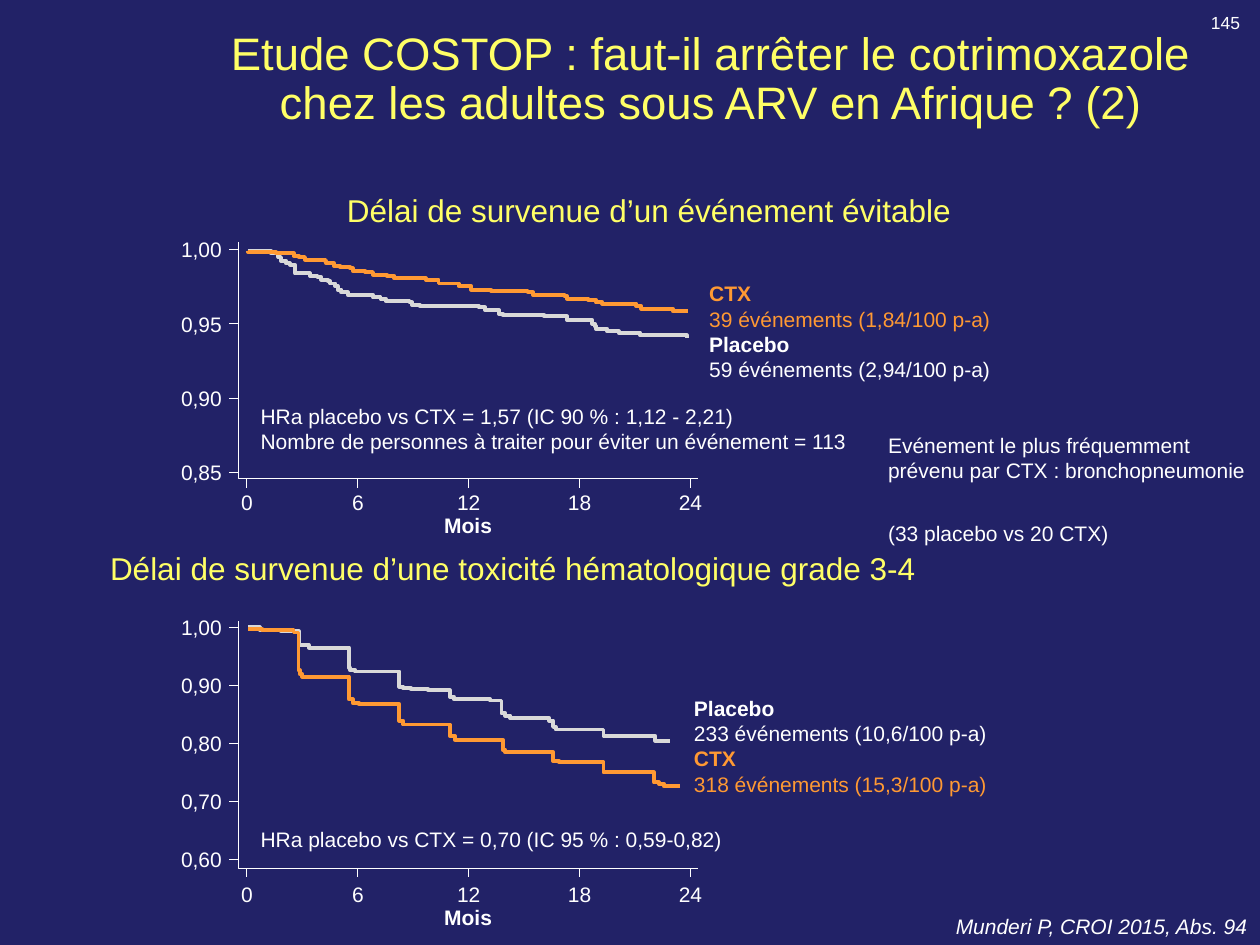
from dataclasses import dataclass

from lxml import etree
from pptx import Presentation
from pptx import util as u
from pptx.dml.color import RGBColor
from pptx.enum import shapes, text
from pptx.oxml import ns


@dataclass(frozen=True)
class Theme:
    font: str = "Arial"
    background: str = "222267"
    heading: str = "FFFF66"
    white: str = "FFFFFF"
    placebo: str = "D9D9D9"
    ctx: str = "FF9933"
    title_size: int = 26
    subtitle_size: int = 18
    body_size: int = 12
    number_size: int = 10
    axis_width: float = 0.5
    curve_width: float = 2.25


THEME = Theme()
LEFT, CENTER, RIGHT = text.PP_ALIGN.LEFT, text.PP_ALIGN.CENTER, text.PP_ALIGN.RIGHT

# Horizontal scale shared by both plots
AXIS_LEFT, AXIS_RIGHT = 1.89, 5.54
FIRST_MONTH, MONTH_STEP = 1.96, 0.88
MONTHS = ["0", "6", "12", "18", "24"]
TICK = 0.07
CURVE_LEFT = 1.97

# Each step runs across to x, then drops to y
EVENT_PLACEBO = [
    (2.15, 2.01), (2.21, 2.04), (2.23, 2.07), (2.27, 2.09), (2.3, 2.1), (2.34, 2.17),
    (2.46, 2.19), (2.52, 2.2), (2.55, 2.22), (2.6, 2.23), (2.62, 2.25), (2.66, 2.27),
    (2.68, 2.3), (2.71, 2.32), (2.76, 2.34), (2.96, 2.36), (3.02, 2.37), (3.06, 2.39),
    (3.25, 2.4), (3.27, 2.42), (3.33, 2.43), (3.8, 2.44), (3.85, 2.46), (3.96, 2.49),
    (3.99, 2.5), (4.32, 2.51), (4.5, 2.54), (4.7, 2.57), (4.72, 2.59), (4.73, 2.61),
    (4.82, 2.63), (4.91, 2.64), (5.08, 2.66), (5.45, 2.68)]
EVENT_CTX = [
    (1.97, 2), (2.19, 2.01), (2.33, 2.03), (2.37, 2.04), (2.42, 2.06), (2.58, 2.07),
    (2.59, 2.09), (2.65, 2.11), (2.7, 2.12), (2.78, 2.13), (2.8, 2.15), (2.9, 2.16),
    (2.96, 2.18), (3.07, 2.19), (3.13, 2.21), (3.38, 2.22), (3.48, 2.25), (3.64, 2.27),
    (3.74, 2.3), (3.9, 2.31), (4.19, 2.32), (4.23, 2.34), (4.48, 2.35), (4.5, 2.37),
    (4.67, 2.38), (4.73, 2.4), (4.78, 2.41), (5.05, 2.43), (5.09, 2.45), (5.34, 2.47),
    (5.46, 2.47)]
TOXICITY_PLACEBO = [
    (2.06, 5), (2.23, 5.01), (2.37, 5.12), (2.45, 5.14), (2.77, 5.3), (2.78, 5.32),
    (2.82, 5.33), (3.17, 5.45), (3.2, 5.46), (3.26, 5.47), (3.4, 5.48), (3.57, 5.53),
    (3.6, 5.55), (3.89, 5.56), (3.98, 5.66), (4.01, 5.68), (4.05, 5.7), (4.36, 5.72),
    (4.39, 5.77), (4.41, 5.79), (4.79, 5.84), (5.2, 5.88), (5.32, 5.88)]
TOXICITY_CTX = [
    (2.08, 5), (2.33, 5.02), (2.37, 5.32), (2.38, 5.35), (2.4, 5.37), (2.77, 5.55),
    (2.8, 5.58), (2.85, 5.59), (3.17, 5.72), (3.2, 5.75), (3.57, 5.84), (3.61, 5.87),
    (3.99, 5.95), (4.01, 5.97), (4.39, 6.04), (4.44, 6.05), (4.79, 6.13), (5.19, 6.21),
    (5.23, 6.22), (5.27, 6.24), (5.4, 6.24)]


def color(value):
    return RGBColor.from_string(value)


def add_text(parent, box, lines, size=THEME.body_size, fill=THEME.white,
             align=LEFT, wrap=False, bold=False, italic=False):
    """Add a text box with one paragraph for each line."""
    shape = parent.add_textbox(*(u.Inches(value) for value in box))
    frame = shape.text_frame
    frame.text = "\n".join(lines)
    frame.word_wrap = wrap
    for paragraph in frame.paragraphs:
        paragraph.alignment = align
        for run in paragraph.runs:
            font = run.font
            font.name, font.size = THEME.font, u.Pt(size)
            font.bold, font.italic = bold, italic
            font.color.rgb = color(fill)
    return shape


def add_text_shadow(run):
    properties = run.font._element
    effects = etree.Element(ns.qn("a:effectLst"))
    shadow = etree.SubElement(effects, ns.qn("a:outerShdw"), dist="38100", dir="2700000")
    etree.SubElement(shadow, ns.qn("a:srgbClr"), val="000000")
    properties.find(ns.qn("a:solidFill")).addnext(effects)


def add_title(parent, content):
    shape = add_text(parent, (1.53, 0.13, 8.23, 1.02), [content], THEME.title_size,
                     THEME.heading, CENTER, wrap=True)
    shape.text_frame.vertical_anchor = text.MSO_ANCHOR.MIDDLE
    paragraph = shape.text_frame.paragraphs[0]
    paragraph.line_spacing = 0.9
    add_text_shadow(paragraph.runs[0])


def add_legend(parent, box, entries):
    """Add bold arm names, each followed by its event count."""
    lines = [line for name, count, _ in entries for line in (name, count)]
    paragraphs = add_text(parent, box, lines).text_frame.paragraphs
    for index, paragraph in enumerate(paragraphs):
        font = paragraph.runs[0].font
        font.bold = index % 2 == 0
        font.color.rgb = color(entries[index // 2][2])


def add_tick(parent, x1, y1, x2, y2):
    ends = (u.Inches(value) for value in (x1, y1, x2, y2))
    connector = parent.add_connector(shapes.MSO_CONNECTOR.STRAIGHT, *ends)
    connector.line.color.rgb = color(THEME.white)
    connector.line.width = u.Pt(THEME.axis_width)
    etree.SubElement(connector._element.spPr, ns.qn("a:effectLst"))


def add_outline(parent, points, stroke, width):
    start, *others = [(u.Inches(x), u.Inches(y)) for x, y in points]
    builder = parent.build_freeform(*start)
    builder.add_line_segments(others, close=False)
    shape = builder.convert_to_shape()
    shape.shadow.inherit = False
    shape.fill.background()
    shape.line.color.rgb = color(stroke)
    shape.line.width = u.Pt(width)


def add_curve(parent, top, steps, stroke):
    points = [(CURVE_LEFT, top)]
    for x, y in steps:
        points += [(x, points[-1][1]), (x, y)]
    add_outline(parent, points, stroke, THEME.curve_width)


def add_plot(slide, top, bottom, first_tick, tick_step, levels, month_top, curves):
    """Add axes, ticks, labels and curves, and return the group's shapes."""
    parent = slide.shapes.add_group_shape().shapes
    add_outline(parent, [(AXIS_LEFT, top), (AXIS_LEFT, bottom), (AXIS_RIGHT, bottom)],
                THEME.white, THEME.axis_width)
    for index, month in enumerate(MONTHS):
        x = FIRST_MONTH + index * MONTH_STEP
        width = 0.29 if len(month) == 1 else 0.39
        add_tick(parent, x, bottom + TICK, x, bottom)
        add_text(parent, (x - width / 2, month_top, width, 0.3), [month], align=CENTER)
    for index, level in enumerate(levels):
        y = first_tick + index * tick_step
        add_tick(parent, AXIS_LEFT - TICK, y, AXIS_LEFT, y)
        add_text(parent, (1.33, y - 0.15, 0.53, 0.3), [level], align=RIGHT)
    for curve_top, steps, stroke in curves:
        add_curve(parent, curve_top, steps, stroke)
    add_text(parent, (3.42, month_top + 0.18, 0.59, 0.3), ["Mois"], align=CENTER, bold=True)
    return parent


def main():
    presentation = Presentation()
    presentation.slide_width, presentation.slide_height = u.Inches(10), u.Inches(7.5)
    slide = presentation.slides.add_slide(presentation.slide_layouts[6])
    slide.background.fill.solid()
    slide.background.fill.fore_color.rgb = color(THEME.background)

    # Headings
    add_title(slide.shapes, "Etude COSTOP : faut-il arrêter le cotrimoxazole "
                            "chez les adultes sous ARV en Afrique ? (2)")
    for box, heading in [
            ((0.5, 1.47, 9.3, 0.45), "Délai de survenue d’un événement évitable"),
            ((0.5, 4.31, 7.14, 0.45), "Délai de survenue d’une toxicité hématologique grade 3-4")]:
        add_text(slide.shapes, box, [heading], THEME.subtitle_size, THEME.heading,
                 CENTER, wrap=True)

    # Preventable events
    events = add_plot(slide, 1.92, 3.8, 1.98, 0.59, ["1,00", "0,95", "0,90", "0,85"], 3.84,
                      [(1.99, EVENT_PLACEBO, THEME.placebo), (1.99, EVENT_CTX, THEME.ctx)])
    add_text(events, (1.97, 3.15, 4.89, 0.51),
             ["HRa placebo vs CTX = 1,57 (IC 90 % : 1,12 - 2,21)",
              "Nombre de personnes à traiter pour éviter un événement = 113"])
    add_legend(events, (5.53, 2.18, 2.45, 0.91),
               [("CTX", "39 événements (1,84/100 p-a)", THEME.ctx),
                ("Placebo", "59 événements (2,94/100 p-a)", THEME.white)])

    # Haematological toxicity
    toxicity = add_plot(slide, 4.93, 6.89, 4.98, 0.46,
                        ["1,00", "0,90", "0,80", "0,70", "0,60"], 6.95,
                        [(4.98, TOXICITY_PLACEBO, THEME.placebo),
                         (4.99, TOXICITY_CTX, THEME.ctx)])
    add_text(toxicity, (1.97, 6.51, 3.9, 0.3),
             ["HRa placebo vs CTX = 0,70 (IC 95 % : 0,59-0,82)"])
    add_legend(toxicity, (5.41, 5.47, 2.54, 0.91),
               [("Placebo", "233 événements (10,6/100 p-a)", THEME.white),
                ("CTX", "318 événements (15,3/100 p-a)", THEME.ctx)])

    # Comment, citation and slide number
    add_text(slide.shapes, (6.95, 3.38, 3.05, 0.71),
             ["Evénement le plus fréquemment prévenu par CTX : bronchopneumonie "
              "\v(33 placebo vs 20 CTX)"], wrap=True)
    add_text(slide.shapes, (6.46, 7.2, 3.54, 0.3), ["Munderi P, CROI 2015, Abs. 94"],
             align=RIGHT, wrap=True, italic=True)
    add_text(slide.shapes, (9.51, 0.05, 0.43, 0.27), ["145"], THEME.number_size, align=RIGHT)

    presentation.save("out.pptx")


if __name__ == "__main__":
    main()
